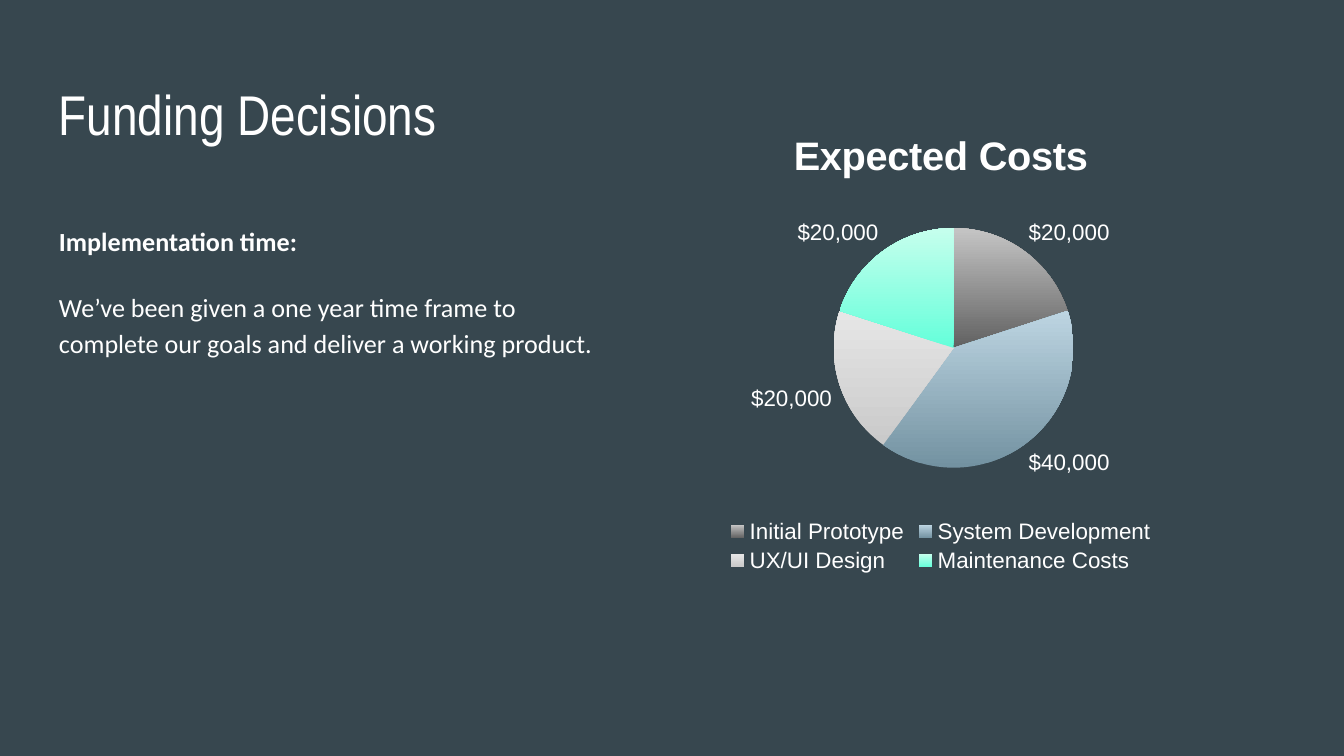
from dataclasses import dataclass

from pptx import Presentation
from pptx.chart.data import CategoryChartData
from pptx.dml.color import RGBColor
from pptx.enum.chart import XL_CHART_TYPE, XL_LABEL_POSITION, XL_LEGEND_POSITION
from pptx.slide import Slide
from pptx.text.text import Font
from pptx.util import Inches, Pt

WIDTH = 10
WHITE = "FFFFFF"
TITLE = "Expected Costs"


@dataclass
class Para:
    """A paragraph of one run with its look."""
    text: str
    size: float
    face: str
    bold: bool = False
    line: float = 1.0
    before: float = 0


@dataclass
class Slice:
    """A pie slice with its cost and its colours from low to high."""
    name: str
    cost: int
    low: str
    high: str


HEAD = [Para("Funding Decisions", 30, "Arial Narrow")]
BODY = [
    Para("Implementation time:", 14, "Calibri", True, 1.15, 16),
    Para("We’ve been given a one year time frame to complete our goals "
         "and deliver a working product.", 14, "Calibri", False, 1.15, 16),
]
COSTS = [
    Slice("Initial Prototype", 20000, "616161", "C5C5C5"),
    Slice("System Development", 40000, "7392A1", "BDD5E2"),
    Slice("UX/UI Design", 20000, "CACACA", "E6E6E6"),
    Slice("Maintenance Costs", 20000, "64FFDA", "C6FFED"),
]


def color(code: str) -> RGBColor:
    """Turn a hex string into a colour."""
    return RGBColor.from_string(code)


def style(font: Font, size: float, face: str = "Arial", bold: bool = False) -> None:
    """Set a white font of the given size and face."""
    font.size = Pt(size)
    font.name = face
    font.bold = bold
    font.color.rgb = color(WHITE)


def write(slide: Slide, left: float, top: float, width: float, height: float,
          paras: list[Para]) -> None:
    """Add a wrapped text box that holds the paragraphs."""
    box = slide.shapes.add_textbox(Inches(left), Inches(top), Inches(width), Inches(height))
    frame = box.text_frame
    frame.word_wrap = True
    frame.margin_left = frame.margin_right = Inches(0.1)
    frame.margin_top = frame.margin_bottom = Inches(0.1)
    for rank, item in enumerate(paras):
        para = frame.add_paragraph() if rank else frame.paragraphs[0]
        para.line_spacing = item.line
        para.space_before = Pt(item.before)
        run = para.add_run()
        run.text = item.text
        style(run.font, item.size, item.face, item.bold)


def plot(slide: Slide, parts: list[Slice]) -> None:
    """Add the pie chart of costs."""
    data = CategoryChartData(number_format='"$"#,##0')
    data.categories = [part.name for part in parts]
    data.add_series(TITLE, [part.cost for part in parts])
    chart = slide.shapes.add_chart(XL_CHART_TYPE.PIE, Inches(4), Inches(0.8),
                                   Inches(6), Inches(3.5), data).chart
    style(chart.font, 10)

    chart.has_title = True
    run = chart.chart_title.text_frame.paragraphs[0].add_run()
    run.text = TITLE
    style(run.font, 21.3, bold=True)
    chart.chart_title.include_in_layout = False

    chart.has_legend = True
    chart.legend.position = XL_LEGEND_POSITION.BOTTOM
    chart.legend.include_in_layout = False
    style(chart.legend.font, 12)

    pie = chart.plots[0]
    pie.vary_by_categories = True
    pie.has_data_labels = True
    labels = pie.data_labels
    labels.show_value = True
    labels.show_percentage = False
    labels.position = XL_LABEL_POSITION.OUTSIDE_END
    labels.number_format = '"$"#,##0'
    labels.number_format_is_linked = False
    style(labels.font, 12)

    for rank, part in enumerate(parts):
        look = pie.series[0].points[rank].format
        look.line.fill.background()
        look.fill.gradient()
        look.fill.gradient_angle = 90
        for stop, place, code in zip(look.fill.gradient_stops, (0, 1), (part.low, part.high)):
            stop.position = place
            stop.color.rgb = color(code)


def main() -> None:
    """Build and save the funding slide."""
    deck = Presentation()
    deck.slide_width = Inches(WIDTH)
    deck.slide_height = Inches(WIDTH * 9 / 16)
    slide = deck.slides.add_slide(deck.slide_layouts[6])
    slide.background.fill.solid()
    slide.background.fill.fore_color.rgb = color("37474F")
    write(slide, 0.34, 0.49, 9.32, 0.63, HEAD)
    write(slide, 0.34, 1.54, 4.28, 0.88, BODY)
    plot(slide, COSTS)
    deck.save("out.pptx")


if __name__ == "__main__":
    main()
